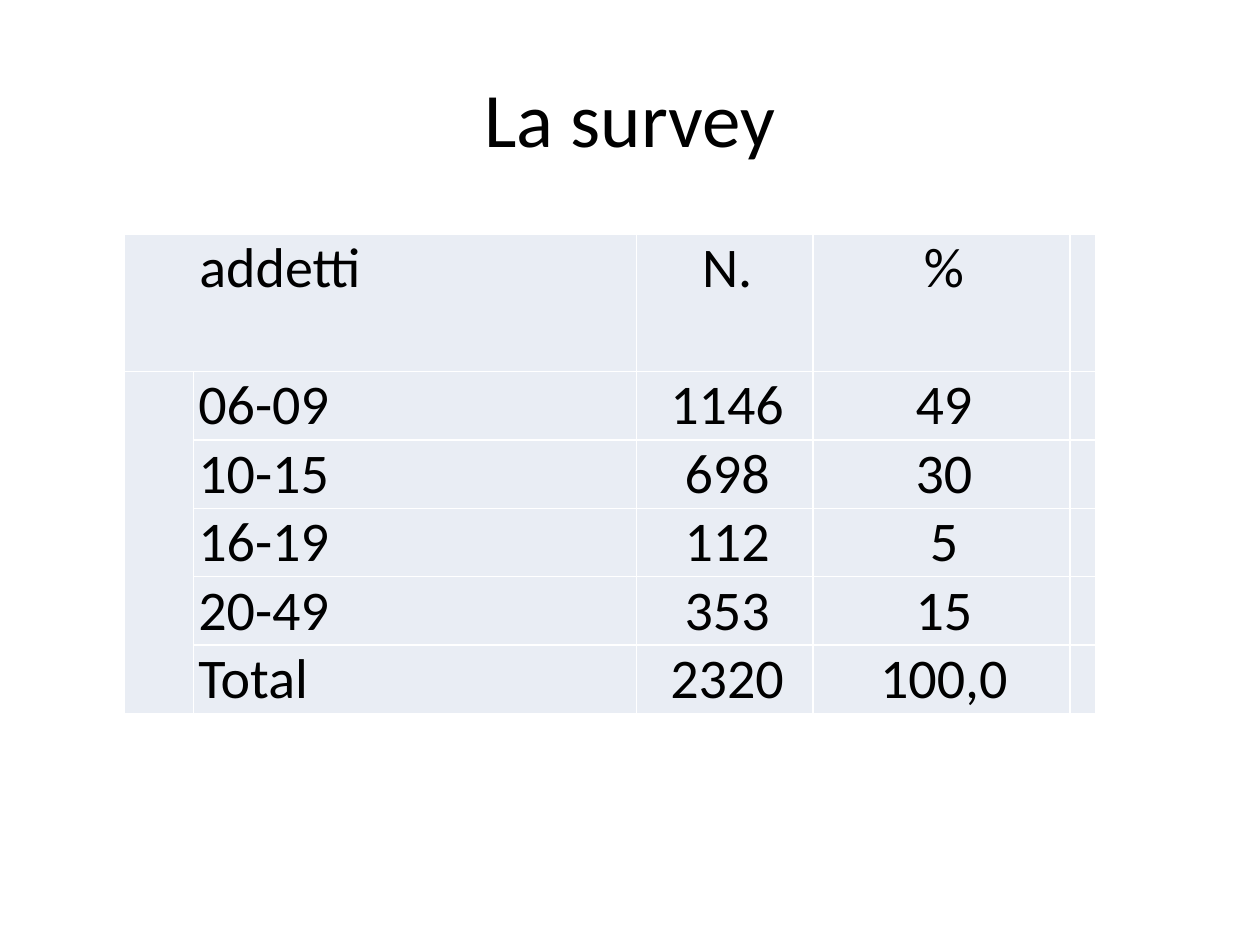
from dataclasses import dataclass

from lxml.etree import SubElement as Sub
from pptx import Presentation
from pptx.dml.color import RGBColor as Rgb
from pptx.enum.text import MSO_ANCHOR as Anchor, PP_ALIGN as Align
from pptx.oxml.ns import qn
from pptx.util import Cm, Pt


@dataclass(frozen=True)
class Theme:
    font: str = "Calibri"
    ink: str = "000000"
    fill: str = "E9EDF4"
    rule: str = "FFFFFF"
    title: int = 44
    body: int = 32
    line: int = 1


THEME = Theme()
COLS = (1.4, 8.93, 3.56, 5.18, 0.51)
HEAD, ROW = 2.76, 1.38
LEAD, PAD = 1.52, 0.1
DATA = (
    ("06-09", "1146", "49"),
    ("10-15", "698", "30"),
    ("16-19", "112", "5"),
    ("20-49", "353", "15"),
    ("Total", "2320", "100,0"),
)


def write(frame, text, size, align):
    para = frame.paragraphs[0]
    para.text = text
    para.alignment = align
    para.font.name = THEME.font
    para.font.size = Pt(size)
    para.font.color.rgb = Rgb.from_string(THEME.ink)
    return para


def add_title(slide, text):
    box = slide.shapes.add_textbox(Cm(1.27), Cm(0.76), Cm(22.86), Cm(3.18))
    frame = box.text_frame
    frame.word_wrap = True
    frame.vertical_anchor = Anchor.MIDDLE
    write(frame, text, THEME.title, Align.CENTER)


def style(cell):
    cell.margin_left = cell.margin_right = 0
    cell.margin_top = cell.margin_bottom = 0
    props = cell._tc.get_or_add_tcPr()
    for side in ("lnL", "lnR", "lnT", "lnB"):
        line = Sub(props, qn(f"a:{side}"), w=str(Pt(THEME.line)))
        paint = Sub(line, qn("a:solidFill"))
        Sub(paint, qn("a:srgbClr"), val=THEME.rule)
    cell.fill.solid()
    cell.fill.fore_color.rgb = Rgb.from_string(THEME.fill)


def fill_cell(cell, text, align, inset, anchor):
    para = write(cell.text_frame, text, THEME.body, align)
    props = para._p.get_or_add_pPr()
    props.set("marL", str(Cm(inset)))
    props.set("indent", "0")
    cell.vertical_anchor = anchor


def add_grid(slide, head, data):
    tall = (HEAD,) + (ROW,) * len(data)
    shape = slide.shapes.add_table(
        len(tall), len(COLS), Cm(2.5), Cm(4.73), Cm(sum(COLS)), Cm(sum(tall))
    )
    table = shape.table
    table.first_row = table.horz_banding = False
    for col, width in zip(table.columns, COLS):
        col.width = Cm(width)
    for row, height in zip(table.rows, tall):
        row.height = Cm(height)
    for cell in table.iter_cells():
        style(cell)
    table.cell(0, 0).merge(table.cell(0, 1))
    table.cell(1, 0).merge(table.cell(len(data), 0))

    fill_cell(table.cell(0, 0), head[0], Align.LEFT, LEAD, Anchor.TOP)
    for col, text in enumerate(head[1:], 2):
        fill_cell(table.cell(0, col), text, Align.CENTER, PAD, Anchor.TOP)
    for row, texts in enumerate(data, 1):
        for col, text in enumerate(texts, 1):
            align = Align.LEFT if col == 1 else Align.CENTER
            fill_cell(table.cell(row, col), text, align, PAD, Anchor.MIDDLE)


def main():
    deck = Presentation()
    deck.slide_width, deck.slide_height = Cm(25.4), Cm(19.05)
    slide = deck.slides.add_slide(deck.slide_layouts[6])
    add_title(slide, "La survey")
    add_grid(slide, ("addetti", "N.", "%"), DATA)
    deck.save("out.pptx")


if __name__ == "__main__":
    main()
